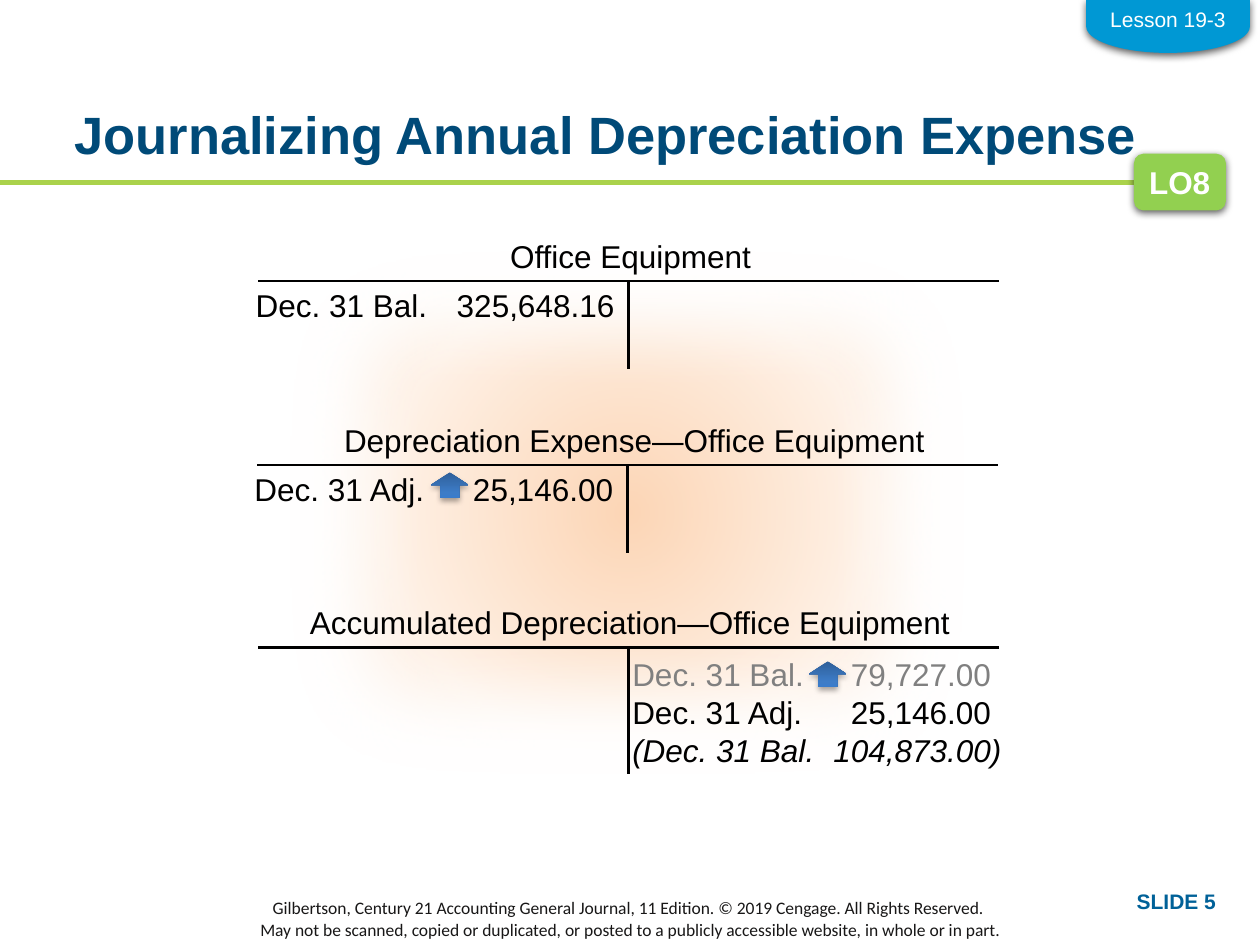
import pptx
import pptx.util
import pptx.dml.color
import pptx.enum.shapes
import pptx.enum.text
import pptx.oxml
import pptx.oxml.ns
from dataclasses import dataclass

Inches, Pt = pptx.util.Inches, pptx.util.Pt
SHAPE = pptx.enum.shapes.MSO_SHAPE
ALIGN = pptx.enum.text.PP_ALIGN
ANCHOR = pptx.enum.text.MSO_ANCHOR
AUTO = pptx.enum.text.MSO_AUTO_SIZE


@dataclass(frozen=True)
class Theme:
    font: str = "Arial"
    footer_font: str = "Calibri"
    title: str = "004A78"
    rule: str = "AAD24B"
    badge: str = "92D050"
    tab: str = "0098D4"
    number: str = "006198"
    footer: str = "181717"
    ink: str = "000000"
    muted: str = "808080"
    white: str = "FFFFFF"
    title_size: int = 30
    body_size: int = 18
    small_size: int = 12
    footer_size: int = 10


THEME = Theme()
TITLE = "Journalizing Annual Depreciation Expense"
FOOTER = [
    "Gilbertson, Century 21 Accounting General Journal, 11 Edition. © 2019 Cengage. All Rights Reserved. ",
    "May not be scanned, copied or duplicated, or posted to a publicly accessible website, in whole or in part.",
]
ACCOUNTS = [
    dict(name="Office Equipment", name_left=2.7, name_width=4.61,
         left=2.05, top=2.23, stem=0.7, side="debit", arrow=None,
         entries=[("Dec. 31 Bal.\t325,648.16", THEME.ink, False)]),
    dict(name="Depreciation Expense—Office Equipment", name_left=2.42, name_width=5.23,
         left=2.04, top=3.69, stem=0.7, side="debit", arrow=(3.42, 3.75),
         entries=[("Dec. 31 Adj.\t25,146.00", THEME.ink, False)]),
    dict(name="Accumulated Depreciation—Office Equipment", name_left=2, name_width=6,
         left=2.05, top=5.14, stem=1, side="credit", arrow=(6.42, 5.25),
         entries=[("Dec. 31 Bal.\t79,727.00", THEME.muted, False),
                  ("Dec. 31 Adj.\t25,146.00", THEME.ink, False),
                  ("(Dec. 31 Bal.\t104,873.00)", THEME.ink, True)]),
]
ACCOUNT_WIDTH = 5.88
ENTRY_BOX = {"debit": (-0.12, -0.01, 3.11, 0.4), "credit": (2.87, 0.01, 3.16, 1.01)}
DECIMAL_TAB = 2.5
GLOW_STOPS = [(0, "FCD5B5", 100), (50, "FEF1E6", 100), (100, "FDEADA", 43)]
GLOW_PATH = ('<a:path path="circle"><a:fillToRect l="50000" t="50000" '
             'r="50000" b="50000"/></a:path>')
ARROW_STOPS = [(0, "2F5F99", 100), (80, "3D7CC7", 100), (100, "3A7CCB", 100)]
ARROW_ANGLE = '<a:lin ang="16200000" scaled="0"/>'
ARROW_SHADOW = (35, 3.1, 1.8)
BADGE_SHADOW = (63, 4.5, 1.5)


def rgb(value):
    return pptx.dml.color.RGBColor.from_string(value)


def xml(tag, attributes="", inner=""):
    return pptx.oxml.parse_xml(
        f'<a:{tag} {pptx.oxml.ns.nsdecls("a")} {attributes}>{inner}</a:{tag}>')


def add_run(para, text, color, size, font=THEME.font, bold=False, italic=False):
    span = para.add_run()
    span.text = text
    span.font.name = font
    span.font.size = Pt(size)
    span.font.bold = bold
    span.font.italic = italic
    span.font.color.rgb = rgb(color)


def paragraphs(frame, count):
    return [frame.paragraphs[0]] + [frame.add_paragraph() for _ in range(count - 1)]


def add_box(shapes, at, lines, align, color, size, wrap=True, auto=AUTO.NONE,
            anchor=ANCHOR.TOP, **style):
    box = shapes.add_textbox(*map(Inches, at))
    frame = box.text_frame
    frame.word_wrap = wrap
    frame.auto_size = auto
    frame.vertical_anchor = anchor
    for para, line in zip(paragraphs(frame, len(lines)), lines):
        para.alignment = align
        add_run(para, line, color, size, **style)


def add_line(shapes, start, end, color, width):
    line = shapes.add_connector(pptx.enum.shapes.MSO_CONNECTOR.STRAIGHT,
                                *map(Inches, (*start, *end)))
    line.line.color.rgb = rgb(color)
    line.line.width = Pt(width)
    line._element.spPr.append(xml("effectLst"))


def add_shape(shapes, kind, at, color=None, shadow=None):
    shape = shapes.add_shape(kind, *map(Inches, at))
    shape.shadow.inherit = False
    shape.line.fill.background()
    if color:
        shape.fill.solid()
        shape.fill.fore_color.rgb = rgb(color)
    if shadow:
        alpha, blur, distance = shadow
        add_effect(shape, xml(
            "outerShdw",
            f'blurRad="{Pt(blur)}" dist="{Pt(distance)}" dir="5400000" rotWithShape="0"',
            f'<a:srgbClr val="{THEME.ink}"><a:alpha val="{alpha * 1000}"/></a:srgbClr>'))
    return shape


def add_effect(shape, effect):
    shape._element.spPr.find(pptx.oxml.ns.qn("a:effectLst")).append(effect)


def set_gradient(shape, stops, direction):
    inner = "".join(
        f'<a:gs pos="{place * 1000}"><a:srgbClr val="{color}">'
        f'<a:alpha val="{alpha * 1000}"/></a:srgbClr></a:gs>'
        for place, color, alpha in stops)
    gradient = xml("gradFill", 'rotWithShape="1"', f"<a:gsLst>{inner}</a:gsLst>{direction}")
    shape._element.spPr.find(pptx.oxml.ns.qn("a:prstGeom")).addnext(gradient)


def add_glow(shapes):
    glow = add_shape(shapes, SHAPE.RECTANGLE, (2.02, 1.72, 5.92, 4.7))
    set_gradient(glow, GLOW_STOPS, GLOW_PATH)
    add_effect(glow, xml("softEdge", f'rad="{Pt(50)}"'))


def add_entries(shapes, account):
    dx, dy, width, height = ENTRY_BOX[account["side"]]
    box = shapes.add_textbox(*map(Inches, (account["left"] + dx, account["top"] + dy,
                                           width, height)))
    frame = box.text_frame
    frame.word_wrap = True
    frame.auto_size = AUTO.SHAPE_TO_FIT_TEXT
    entries = account["entries"]
    for para, (text, color, italic) in zip(paragraphs(frame, len(entries)), entries):
        para._p.get_or_add_pPr().append(
            xml("tabLst", "", f'<a:tab pos="{Inches(DECIMAL_TAB)}" algn="dec"/>'))
        add_run(para, text, color, THEME.body_size, italic=italic)


def add_account(page, account):
    shapes = page.shapes.add_group_shape().shapes
    left, top = account["left"], account["top"]
    middle = left + ACCOUNT_WIDTH / 2
    add_box(shapes, (account["name_left"], top - 0.4, account["name_width"], 0.4),
            [account["name"]], ALIGN.CENTER, THEME.ink, THEME.body_size,
            auto=AUTO.SHAPE_TO_FIT_TEXT)
    add_line(shapes, (left + ACCOUNT_WIDTH, top), (left, top), THEME.ink, 1.5)
    add_line(shapes, (middle, top), (middle, top + account["stem"]), THEME.ink, 1.5)
    add_entries(shapes, account)
    if account["arrow"]:
        arrow = add_shape(page.shapes, SHAPE.DOWN_ARROW, (*account["arrow"], 0.3, 0.2),
                          shadow=ARROW_SHADOW)
        arrow._element.spPr.xfrm.set("flipV", "1")
        set_gradient(arrow, ARROW_STOPS, ARROW_ANGLE)


def add_title(page):
    title = page.shapes.title
    title.left, title.top, title.width, title.height = map(Inches, (0.5, 0.87, 8.62, 0.74))
    frame = title.text_frame
    frame.margin_left = frame.margin_top = frame.margin_right = frame.margin_bottom = 0
    frame.auto_size = AUTO.NONE
    frame.vertical_anchor = ANCHOR.TOP
    para = frame.paragraphs[0]
    para.alignment = ALIGN.CENTER
    para.line_spacing = 0.9
    add_run(para, TITLE, THEME.title, THEME.title_size, bold=True)


def main():
    deck = pptx.Presentation()
    deck.slide_width, deck.slide_height = Inches(10), Inches(7.5)
    page = deck.slides.add_slide(deck.slide_layouts[5])
    add_line(page.shapes, (0, 1.45), (9.5, 1.45), THEME.rule, 3)
    add_box(page.shapes, (0, 7.14, 10, 0.3), FOOTER, ALIGN.CENTER, THEME.footer,
            THEME.footer_size, anchor=ANCHOR.MIDDLE, font=THEME.footer_font)
    add_title(page)
    add_glow(page.shapes)
    for account in ACCOUNTS:
        add_account(page, account)

    badge = add_shape(page.shapes, SHAPE.ROUNDED_RECTANGLE, (9, 1.22, 0.73, 0.45),
                      THEME.badge, BADGE_SHADOW)
    badge.text_frame.word_wrap = False
    para = badge.text_frame.paragraphs[0]
    para.alignment = ALIGN.LEFT
    add_run(para, "LO8", THEME.white, THEME.body_size, bold=True)
    add_box(page.shapes, (7.75, 7, 2, 0.3), ["SLIDE 5"], ALIGN.RIGHT, THEME.number,
            THEME.small_size, bold=True)
    lesson = add_shape(page.shapes, SHAPE.FLOWCHART_DELAY, (9.06, -0.44, 0.42, 1.3),
                       THEME.tab, BADGE_SHADOW)
    lesson.rotation = 90
    add_box(page.shapes, (8.71, 0, 1.12, 0.3), ["Lesson 19-3"], ALIGN.CENTER, THEME.white,
            THEME.small_size, wrap=False, auto=AUTO.SHAPE_TO_FIT_TEXT)
    deck.save("out.pptx")


if __name__ == "__main__":
    main()
